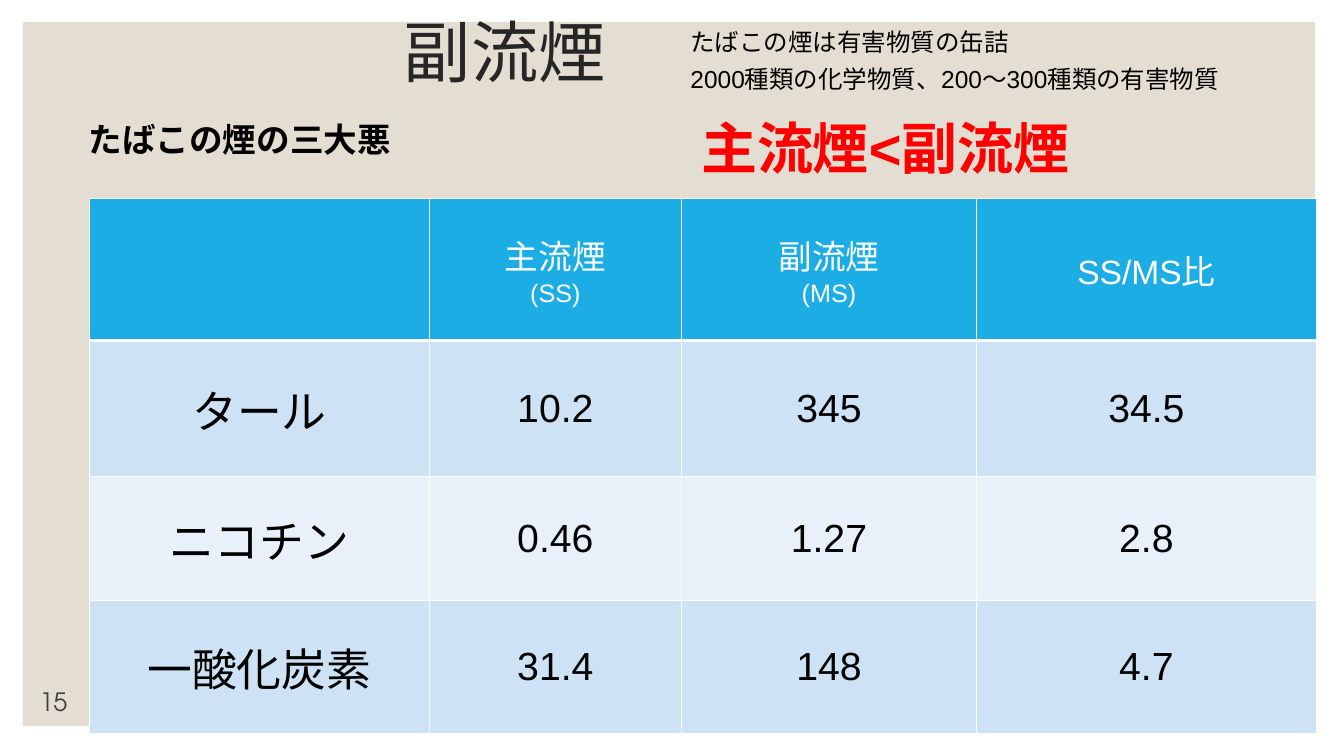
from pptx import Presentation
from pptx.dml.color import RGBColor
from pptx.enum.lang import MSO_LANGUAGE_ID
from pptx.enum.shapes import MSO_SHAPE
from pptx.enum.text import MSO_ANCHOR, PP_ALIGN
from pptx.oxml import parse_xml
from pptx.oxml.ns import nsdecls
from pptx.util import Cm, Pt

WHITE = RGBColor(0xFF, 0xFF, 0xFF)
BLACK = RGBColor(0, 0, 0)
RED = RGBColor(0xFF, 0, 0)
DARK = RGBColor(0x26, 0x26, 0x26)
GRAY = RGBColor(0x40, 0x40, 0x40)
SAND = RGBColor(0xE3, 0xDE, 0xD1)
BLUE = RGBColor(0x1C, 0xAD, 0xE4)
PALE = RGBColor(0xCD, 0xE3, 0xF5)
LIGHT = RGBColor(0xE8, 0xF1, 0xFA)
HEAD_FONT = "TeX Gyre Adventor"


def write(frame, *lines, size=18, font="Arial", color=BLACK, bold=False,
          align=PP_ALIGN.LEFT, space=None, before=None):
    """Fill a frame; a line is a text or a (text, size) pair."""
    for i, line in enumerate(lines):
        text, pts = line if isinstance(line, tuple) else (line, size)
        para = frame.add_paragraph() if i else frame.paragraphs[0]
        para.alignment = align
        para.line_spacing = space
        para.space_before = before
        run = para.add_run()
        run.text = text
        run.font.size = Pt(pts)
        run.font.name = font
        run.font.bold = bold
        run.font.color.rgb = color
        run.font.language_id = MSO_LANGUAGE_ID.JAPANESE


class Page:
    def __init__(self, slide, line=WHITE):
        self.shapes = slide.shapes
        self.line = line

    def panel(self, box, fill):
        shape = self.shapes.add_shape(MSO_SHAPE.RECTANGLE, *map(Cm, box))
        shape.shadow.inherit = False
        shape.fill.solid()
        shape.fill.fore_color.rgb = fill
        shape.line.fill.background()

    def text(self, box, *lines, anchor=MSO_ANCHOR.TOP, **style):
        frame = self.shapes.add_textbox(*map(Cm, box)).text_frame
        frame.word_wrap = True
        frame.vertical_anchor = anchor
        write(frame, *lines, **style)

    def border(self, cell, **widths):
        props = cell._tc.get_or_add_tcPr()
        for i, side in enumerate("LRTB"):
            width = Pt(widths.get(side, 1))
            props.insert(i, parse_xml(
                f'<a:ln{side} {nsdecls("a")} w="{width}"><a:solidFill>'
                f'<a:srgbClr val="{self.line}"/></a:solidFill></a:ln{side}>'))

    def table(self, left, top, cols, rows, data):
        grid = self.shapes.add_table(
            len(rows), len(cols), Cm(left), Cm(top),
            Cm(sum(cols)), Cm(sum(rows))).table
        for col, width in zip(grid.columns, cols):
            col.width = Cm(width)
        for r, (row, height) in enumerate(zip(data, rows)):
            grid.rows[r].height = Cm(height)
            for c, lines in enumerate(row):
                cell = grid.cell(r, c)
                cell.vertical_anchor = MSO_ANCHOR.MIDDLE
                cell.fill.solid()
                cell.fill.fore_color.rgb = (
                    BLUE if r == 0 else PALE if r % 2 else LIGHT)
                # Thick rule between header and body
                self.border(cell, B=3 if r == 0 else 1, T=3 if r == 1 else 1)
                size = 24 if r == 0 else 28 if c else 32
                write(cell.text_frame, *lines, size=size,
                      color=BLACK if r else WHITE, align=PP_ALIGN.CENTER)


def main():
    deck = Presentation()
    deck.slide_width, deck.slide_height = Cm(33.87), Cm(19.05)
    page = Page(deck.slides.add_slide(deck.slide_layouts[6]))

    # Background and title
    page.panel((0.58, 0.56, 32.56, 17.73), SAND)
    page.text((9.93, 0, 6.65, 2.79), "副流煙", size=48, font=HEAD_FONT,
              color=DARK, space=0.9, anchor=MSO_ANCHOR.MIDDLE)

    # Introduction
    page.text((17.15, 0.71, 16.74, 1.93), "たばこの煙は有害物質の缶詰",
              "2000種類の化学物質、200～300種類の有害物質",
              size=17.5, space=0.8, before=Pt(9))

    # Smoke values
    page.table(2.26, 5, (8.56, 6.35, 7.44, 8.56), (3.58, 3.43, 3.12, 3.35), [
        [(), ("主流煙", ("(SS)", 18)), ("副流煙", ("(MS)", 18)), ("SS/MS比",)],
        [("タール",), ("10.2",), ("345",), ("34.5",)],
        [("ニコチン",), ("0.46",), ("1.27",), ("2.8",)],
        [("一酸化炭素",), ("31.4",), ("148",), ("4.7",)],
    ])

    # Table label and main claim
    page.text((1.98, 2.87, 10.08, 1.27), "たばこの煙の三大悪",
              size=24, bold=True)
    page.text((17.42, 2.74, 10.59, 1.96), "主流煙<副流煙",
              size=40, bold=True, color=RED)

    # Page number
    page.text((0.15, 17.42, 1.8, 0.76), "15", font=HEAD_FONT, color=GRAY,
              align=PP_ALIGN.RIGHT, anchor=MSO_ANCHOR.BOTTOM)

    deck.save("out.pptx")


if __name__ == "__main__":
    main()
